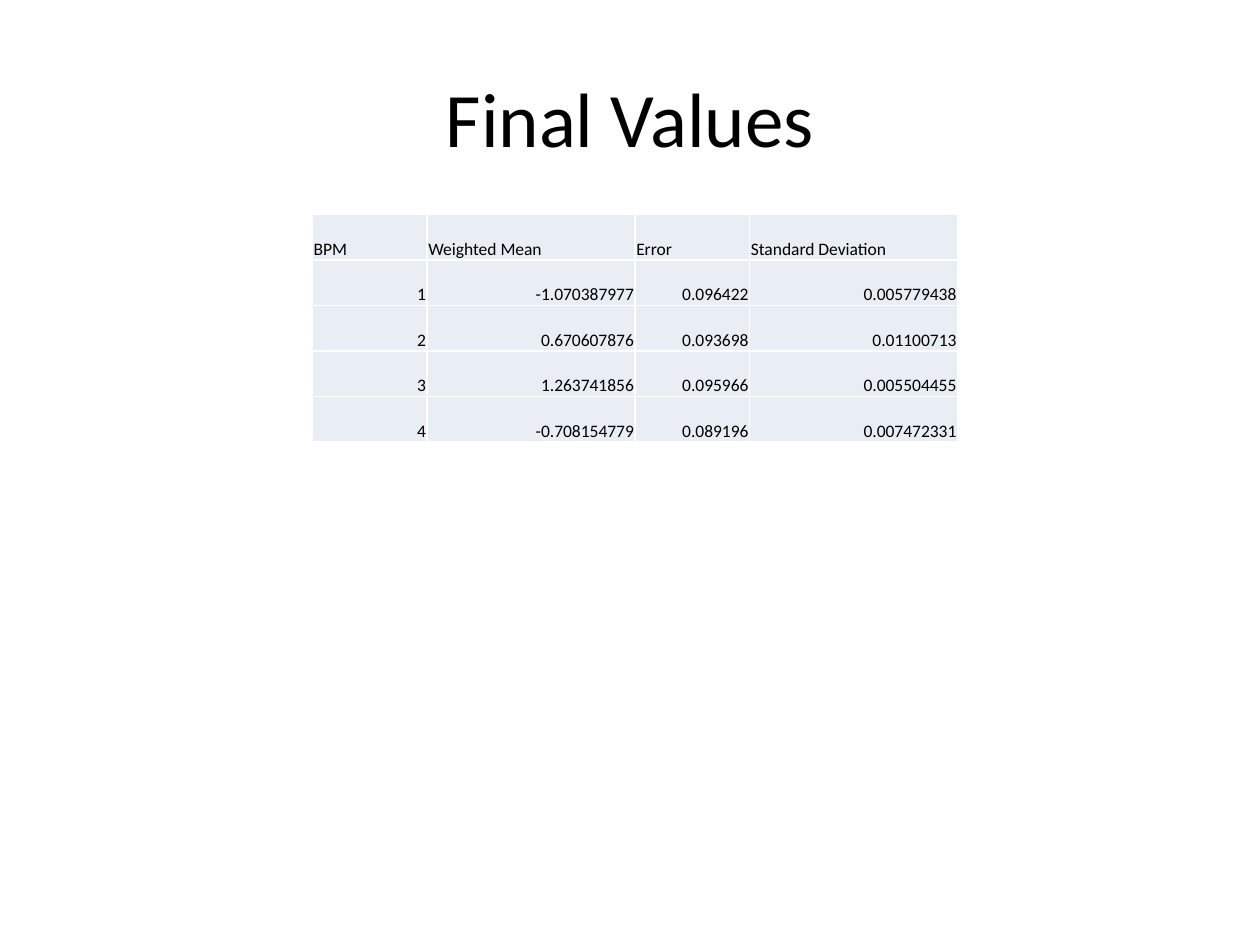
from lxml.etree import SubElement
from pptx import Presentation
from pptx.dml.color import RGBColor
from pptx.enum.text import MSO_ANCHOR, PP_ALIGN
from pptx.oxml.ns import qn
from pptx.util import Inches, Pt

TITLE = "Final Values"
ROWS = [
    ("BPM", "Weighted Mean", "Error", "Standard Deviation"),
    ("1", "-1.070387977", "0.096422", "0.005779438"),
    ("2", "0.670607876", "0.093698", "0.01100713"),
    ("3", "1.263741856", "0.095966", "0.005504455"),
    ("4", "-0.708154779", "0.089196", "0.007472331"),
]
COLUMN_WIDTHS = [0.91, 1.65, 0.91, 1.65]
ROW_HEIGHT = 0.362
TABLE_LEFT, TABLE_TOP = 2.48, 1.7
BLACK, WHITE, PALE_BLUE = "000000", "FFFFFF", "E9EDF4"


def color(value):
    return RGBColor.from_string(value)


def write(frame, text, size, align):
    para = frame.paragraphs[0]
    para.alignment = align
    span = para.add_run()
    span.text = text
    span.font.name = "Calibri"
    span.font.size = Pt(size)
    span.font.bold = False
    span.font.color.rgb = color(BLACK)


def add_borders(cell, line_color, width):
    properties = cell._tc.get_or_add_tcPr()
    for side in ("a:lnL", "a:lnR", "a:lnT", "a:lnB"):
        line = SubElement(properties, qn(side), w=str(Pt(width)))
        fill = SubElement(line, qn("a:solidFill"))
        SubElement(fill, qn("a:srgbClr"), val=line_color)


def add_title(page):
    title = page.shapes.title
    title.left, title.top = Inches(0.5), Inches(0.3)
    title.width, title.height = Inches(9), Inches(1.25)
    title.text_frame.vertical_anchor = MSO_ANCHOR.MIDDLE
    write(title.text_frame, TITLE, size=44, align=PP_ALIGN.CENTER)


def add_values(page):
    table = page.shapes.add_table(
        len(ROWS), len(COLUMN_WIDTHS), Inches(TABLE_LEFT), Inches(TABLE_TOP),
        Inches(sum(COLUMN_WIDTHS)), Inches(ROW_HEIGHT * len(ROWS))).table
    table.first_row = table.horz_banding = False
    for column, width in zip(table.columns, COLUMN_WIDTHS):
        column.width = Inches(width)
    for row_index, values in enumerate(ROWS):
        table.rows[row_index].height = Inches(ROW_HEIGHT)
        align = PP_ALIGN.RIGHT if row_index else PP_ALIGN.LEFT
        for column_index, value in enumerate(values):
            cell = table.cell(row_index, column_index)
            cell.margin_left = cell.margin_right = cell.margin_top = Inches(0.01)
            cell.margin_bottom = 0
            cell.vertical_anchor = MSO_ANCHOR.BOTTOM
            add_borders(cell, WHITE, width=1)
            cell.fill.solid()
            cell.fill.fore_color.rgb = color(PALE_BLUE)
            write(cell.text_frame, value, size=10, align=align)


def main():
    deck = Presentation()
    deck.slide_width, deck.slide_height = Inches(10), Inches(7.5)
    page = deck.slides.add_slide(deck.slide_layouts[5])
    add_title(page)
    add_values(page)
    deck.save("out.pptx")


if __name__ == "__main__":
    main()
